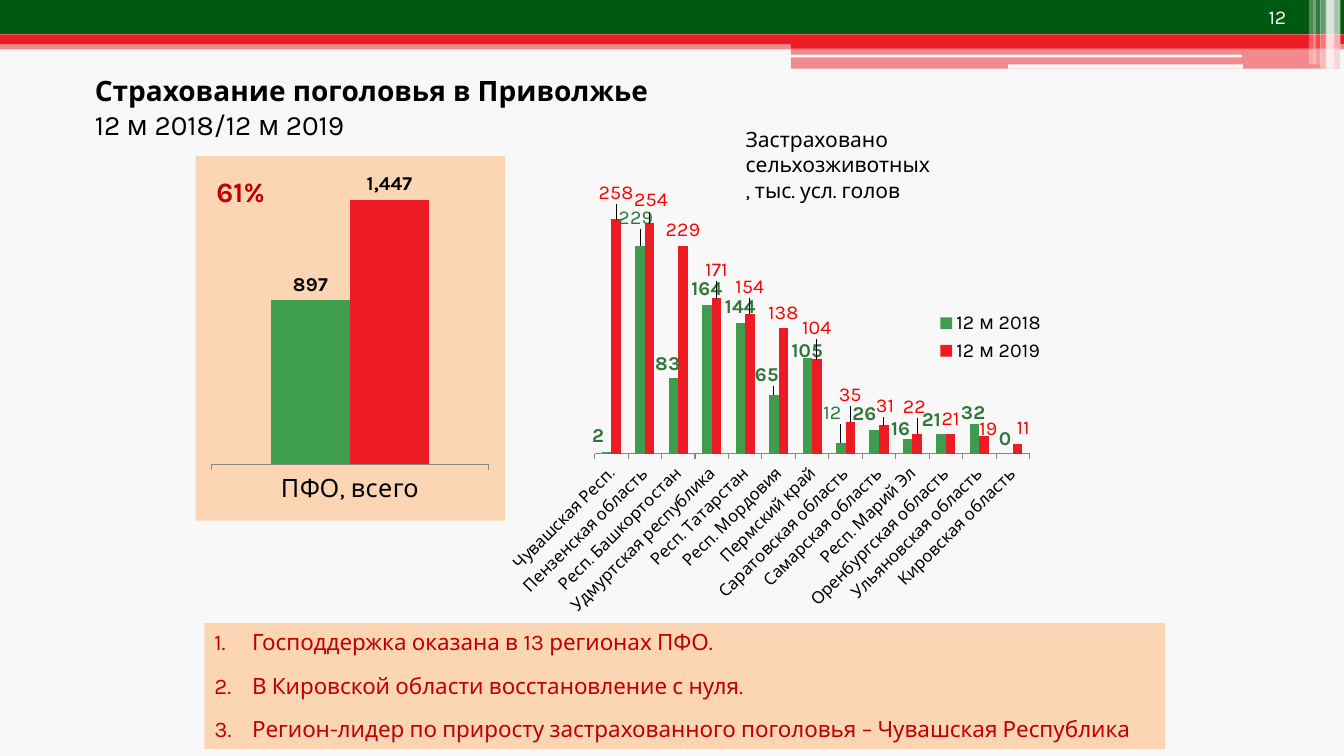
"""Build the slide on livestock insurance in the Volga region."""
from lxml import etree
from pptx import Presentation
from pptx.chart.data import CategoryChartData
from pptx.dml.color import RGBColor
from pptx.enum.chart import XL_CHART_TYPE as CT, XL_LABEL_POSITION as LP
from pptx.enum.chart import XL_LEGEND_POSITION as LEG, XL_TICK_MARK as TICK
from pptx.enum.shapes import MSO_SHAPE as SHAPE
from pptx.enum.text import MSO_ANCHOR as ANCHOR, MSO_AUTO_SIZE as AUTO, PP_ALIGN as ALIGN
from pptx.oxml import parse_xml
from pptx.oxml.ns import nsdecls, qn
from pptx.util import Pt

PAPER = RGBColor(0xF8, 0xF8, 0xF8)
WHITE = RGBColor(0xFF, 0xFF, 0xFF)
BLACK = RGBColor(0, 0, 0)
DARK_GREEN = RGBColor(0x00, 0x59, 0x10)
GREEN = RGBColor(0x3F, 0x9D, 0x4F)
LABEL_GREEN = RGBColor(0x2F, 0x76, 0x3B)
RED = RGBColor(0xED, 0x1C, 0x24)
LABEL_RED = RGBColor(0xFF, 0, 0)
DEEP_RED = RGBColor(0xC0, 0, 0)
PEACH = RGBColor(0xFC, 0xD5, 0xB5)
GREY = RGBColor(0x86, 0x86, 0x86)


def style(font, size, color=BLACK, bold=False):
    for name, value in {"name": "Karla", "size": Pt(size), "bold": bold}.items():
        setattr(font, name, value)
    font.color.rgb = color


def layout_xml(x, y, w=None, h=None, inner=False):
    parts = '<c:layoutTarget val="inner"/>' if inner else ""
    if w:
        parts += '<c:xMode val="edge"/><c:yMode val="edge"/>'
    for tag, value in zip("xywh", (x, y, w, h)):
        if value is not None:
            parts += f'<c:{tag} val="{value:.4f}"/>'
    return parse_xml(f'<c:layout {nsdecls("c")}><c:manualLayout>{parts}'
                     '</c:manualLayout></c:layout>')


prs = Presentation()
prs.slide_width, prs.slide_height = Pt(960), Pt(540)
s = prs.slides.add_slide(prs.slide_layouts[5])
s.background.fill.solid()
s.background.fill.fore_color.rgb = PAPER

bands = [
    (SHAPE.RECTANGLE, 0, 28.8, 960, 6.5, RED, 50),
    (SHAPE.RECTANGLE, 0, 0, 960, 24.5, DARK_GREEN, 100),
    (SHAPE.RECTANGLE, 0, 24.5, 960, 7, RED, 100),
    (SHAPE.RECTANGLE, 565, 28, 392, 6.5, RED, 100),
    (SHAPE.RECTANGLE, 565, 34.5, 392, 14.5, RED, 50),
    (SHAPE.ROUNDED_RECTANGLE, 565, 39, 322, 2, PAPER, 100),
    (SHAPE.ROUNDED_RECTANGLE, 720, 46, 168, 3, PAPER, 100),
    (SHAPE.RECTANGLE, 952, 0, 5.5, 49, WHITE, 65),
    (SHAPE.RECTANGLE, 948, 0, 5, 49, WHITE, 65),
    (SHAPE.RECTANGLE, 947, 0, 5, 49, WHITE, 60),
    (SHAPE.RECTANGLE, 943, 0, 5, 49, WHITE, 40),
    (SHAPE.RECTANGLE, 938, 0, 5.5, 46, WHITE, 20),
    (SHAPE.RECTANGLE, 935, 0, 5, 46, WHITE, 30),
]
for kind, x, y, w, h, color, alpha in bands:
    sp = s.shapes.add_shape(kind, Pt(x), Pt(y), Pt(w), Pt(h))
    sp.shadow.inherit = False
    sp.fill.solid()
    sp.fill.fore_color.rgb = color
    sp.line.fill.background()
    if alpha < 100:
        clr = sp.fill._xPr.find(".//" + qn("a:srgbClr"))
        etree.SubElement(clr, qn("a:alpha")).set("val", str(alpha * 1000))

title = s.shapes.title
for name, value in {"left": 60.5, "top": 49, "width": 879, "height": 50}.items():
    setattr(title, name, Pt(value))
tf = title.text_frame
tf.auto_size, tf.vertical_anchor, tf.word_wrap = AUTO.NONE, ANCHOR.TOP, True
p = tf.paragraphs[0]
p.alignment = ALIGN.LEFT
r = p.add_run()
r.text = "Страхование поголовья в Приволжье"
style(r.font, 20, bold=True)
p.add_line_break()
r = p.add_run()
r.text = "12 м 2018/12 м 2019"
style(r.font, 20)

regions = ["Чувашская Респ.", "Пензенская область", "Респ. Башкортостан",
           "Удмуртская республика", "Респ. Татарстан", "Респ. Мордовия",
           "Пермский край", "Саратовская область", "Самарская область",
           "Респ. Марий Эл", "Оренбургская область", "Ульяновская область",
           "Кировская область"]
heads_2018 = [2, 229, 83, 164, 144, 65, 105, 12, 26, 16, 21, 32, 0]
heads_2019 = [258, 254, 229, 171, 154, 138, 104, 35, 31, 22, 21, 19, 11]
charts = [
    dict(box=(354, 122.5, 478, 324), cats=regions, cat_size=12, top=300,
         plot=(0.148, 0.022, 0.65, 0.6),
         series=[("12 м 2018", heads_2018, GREEN, LABEL_GREEN, True),
                 ("12 м 2019", heads_2019, RED, LABEL_RED, False)]),
    dict(box=(139.7, 111.5, 221, 260.5), cats=["ПФО, всего"], cat_size=18, top=1600,
         plot=(0.052, 0.044, 0.895, 0.801),
         series=[("Series 1", [897], GREEN, BLACK, True),
                 ("Series 2", [1447], RED, BLACK, True)]),
]
built = []
for c in charts:
    data = CategoryChartData(number_format="#,##0")
    data.categories = c["cats"]
    for name, values, *_ in c["series"]:
        data.add_series(name, values)
    chart = s.shapes.add_chart(CT.COLUMN_CLUSTERED, *map(Pt, c["box"]), data).chart
    built.append(chart)
    style(chart.font, 18)
    chart.has_title = chart.has_legend = False
    axis = chart.value_axis
    axis.minimum_scale, axis.maximum_scale = 0, c["top"]
    axis.has_major_gridlines = axis.visible = False
    axis = chart.category_axis
    axis.major_tick_mark = TICK.OUTSIDE
    axis.format.line.color.rgb = GREY
    style(axis.tick_labels.font, c["cat_size"])
    plot = chart.plots[0]
    plot.gap_width, plot.overlap, plot.vary_by_categories = 150, 0, False
    area = chart._chartSpace.chart.plotArea
    for old in area.findall(qn("c:layout")):
        area.remove(old)
    area.insert(0, layout_xml(*c["plot"], inner=True))
    for ser, (_, _, color, label_color, bold) in zip(plot.series, c["series"]):
        ser.format.fill.solid()
        ser.format.fill.fore_color.rgb = color
        labels = ser.data_labels
        labels.show_value, labels.position = True, LP.OUTSIDE_END
        labels.number_format, labels.number_format_is_linked = "#,##0", False
        style(labels.font, 14, label_color, bold)

by_region, total = built
by_region.category_axis._element.txPr.bodyPr.set("rot", "-2700000")
by_region.has_legend = True
legend = by_region.legend
legend.position, legend.include_in_layout = LEG.RIGHT, False
style(legend.font, 14)
legend._element.find(qn("c:legendPos")).addnext(layout_xml(0.65, 0.3, 0.18, 0.13))

label_shifts = [
    {0: (-6, 0), 1: (-3, -9), 2: (-4, 1), 5: (-5, -3), 6: (0, 6), 7: (-6, -10),
     8: (-7, 0), 9: (-5, 4), 10: (-7, 1), 11: (-1, 3), 12: (-2, 1)},
    {0: (0, -8), 1: (1, -5), 3: (0, -9), 4: (0, -8), 6: (0, -11), 7: (0, -8),
     8: (1, -3), 9: (-2, -8), 11: (3, 6), 12: (4, 0)},
]
for ser, shifts, row in zip(by_region.plots[0].series, label_shifts, charts[0]["series"]):
    for i, (dx, dy) in shifts.items():
        label = ser.points[i].data_label
        style(label.font, 14, row[3], row[4] and i not in (1, 7))
        label.position = LP.OUTSIDE_END
        idx = label._dLbl.find(qn("c:idx"))
        idx.addnext(layout_xml(dx / 478, dy / 324))

chart_space = total._chartSpace
chart_space.chart.addnext(parse_xml(
    f'<c:spPr {nsdecls("c", "a")}><a:solidFill><a:srgbClr val="{PEACH}"/></a:solidFill>'
    '<a:ln><a:noFill/></a:ln></c:spPr>'))

texts = [
    ("12", (899, 0, 49, 20), 14, WHITE, False),
    ("Застраховано сельхозживотных, тыс. усл. голов", (525.5, 87, 147.5, 62), 15, BLACK, False),
    ("61%", (147.5, 121, 53, 37), 20, DEEP_RED, True),
]
for text, box, size, color, bold in texts:
    tf = s.shapes.add_textbox(*map(Pt, box)).text_frame
    tf.word_wrap = True
    r = tf.paragraphs[0].add_run()
    r.text = text
    style(r.font, size, color, bold)

sp = s.shapes.add_shape(SHAPE.RECTANGLE, Pt(146), Pt(445), Pt(686), Pt(90))
sp.shadow.inherit = False
sp.fill.solid()
sp.fill.fore_color.rgb = PEACH
sp.line.fill.background()
tf = sp.text_frame
tf.word_wrap, tf.vertical_anchor = True, ANCHOR.TOP
findings = ["Господдержка оказана в 13 регионах ПФО.",
            "В Кировской области восстановление с нуля.",
            "Регион-лидер по приросту застрахованного поголовья – Чувашская Республика"]
for i, text in enumerate(findings):
    p = tf.add_paragraph() if i else tf.paragraphs[0]
    p.alignment, p.space_after = ALIGN.LEFT, Pt(12)
    pPr = p._p.get_or_add_pPr()
    pPr.set("marL", str(Pt(27)))
    pPr.set("indent", str(-Pt(27)))
    etree.SubElement(pPr, qn("a:buFont")).set("typeface", "+mj-lt")
    etree.SubElement(pPr, qn("a:buAutoNum")).set("type", "arabicPeriod")
    r = p.add_run()
    r.text = text
    style(r.font, 16, DEEP_RED)

prs.save("out.pptx")
